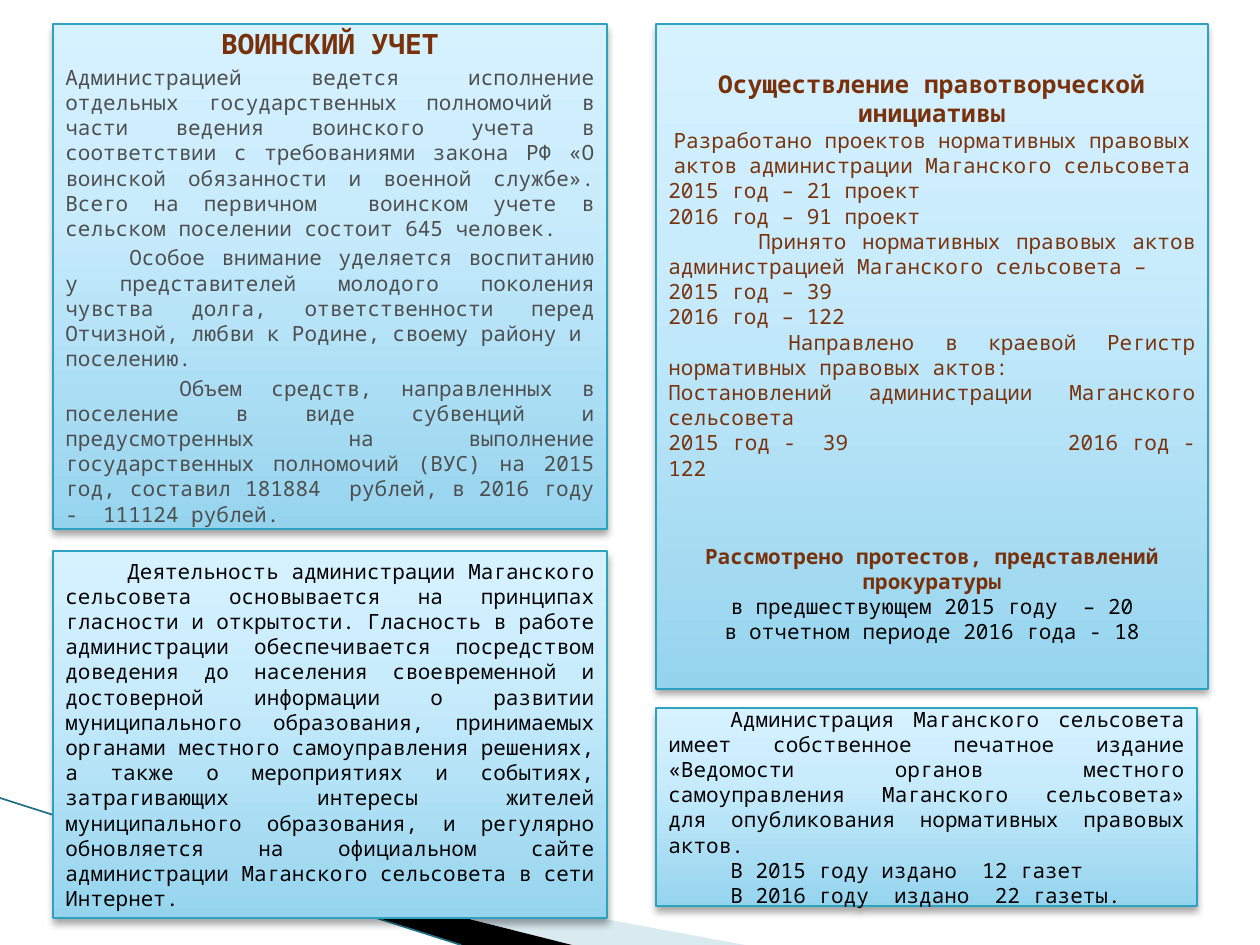
import pptx
import pptx.util
import pptx.dml.color
import pptx.enum.shapes
import pptx.enum.text
import pptx.oxml
import pptx.oxml.ns

COLORS = {
    "panel_dark": "96D4EE", "panel_mid": "C9ECFC", "panel_light": "D7F2FF",
    "border": "2DA2BF", "brown": "78310B", "gray": "4D4D4D", "black": "000000",
    "pale_wedge": "A0CBDC", "wave_line": "1F6F86",
}
FONT = "Noto Sans Mono"
SCALE = 914400 / 126
NAMESPACE = pptx.oxml.ns.nsdecls("a")
ALIGN = pptx.enum.text.PP_ALIGN
CENTER, JUSTIFY = ALIGN.CENTER, ALIGN.JUSTIFY


def px(value):
    return pptx.util.Emu(round(value * SCALE))


def rgb(name):
    return pptx.dml.color.RGBColor.from_string(COLORS[name])


def line(text, color="black", size=12, bold=False, align=JUSTIFY, indent=0, before=0, tab=None):
    """Describe one paragraph; indent and tab are px, before is points."""
    return dict(text=text, color=color, size=size, bold=bold, align=align,
                indent=indent, before=before, tab=tab)


class SlideBuilder:
    def __init__(self, slide):
        self.slide = slide

    def wedge(self, points, color, opacity=100):
        builder = self.slide.shapes.build_freeform(*points[0], scale=SCALE)
        builder.add_line_segments(points[1:], close=True)
        shape = builder.convert_to_shape()
        shape.shadow.inherit = False
        shape.fill.solid()
        shape.fill.fore_color.rgb = rgb(color)
        shape.line.fill.background()
        if opacity < 100:
            color_element = shape._element.spPr.find(".//" + pptx.oxml.ns.qn("a:srgbClr"))
            color_element.append(pptx.oxml.parse_xml(
                f'<a:alpha {NAMESPACE} val="{opacity * 1000}"/>'))

    def connector(self, start, end, color, width):
        connector = self.slide.shapes.add_connector(
            pptx.enum.shapes.MSO_CONNECTOR.STRAIGHT, *map(px, start + end))
        connector.line.color.rgb = rgb(color)
        connector.line.width = pptx.util.Pt(width)
        connector._element.spPr.append(pptx.oxml.parse_xml(f"<a:effectLst {NAMESPACE}/>"))

    def panel(self, left, top, width, height, lines):
        shape = self.slide.shapes.add_shape(
            pptx.enum.shapes.MSO_SHAPE.RECTANGLE, *map(px, (left, top, width, height)))
        shape.shadow.inherit = False
        shape.line.color.rgb = rgb("border")
        shape.line.width = pptx.util.Pt(0.75)
        self.gradient(shape)
        self.drop_shadow(shape)
        frame = shape.text_frame
        frame.word_wrap = True
        frame.vertical_anchor = pptx.enum.text.MSO_ANCHOR.MIDDLE
        for index, item in enumerate(lines):
            paragraph = frame.add_paragraph() if index else frame.paragraphs[0]
            self.fill_paragraph(paragraph, item)

    def gradient(self, shape):
        stops = ((0, "panel_dark"), (65, "panel_mid"), (100, "panel_light"))
        stop_xml = "".join(
            f'<a:gs pos="{position * 1000}"><a:srgbClr val="{COLORS[name]}"/></a:gs>'
            for position, name in stops)
        shape._element.spPr.find(pptx.oxml.ns.qn("a:prstGeom")).addnext(pptx.oxml.parse_xml(
            f'<a:gradFill {NAMESPACE} rotWithShape="1"><a:gsLst>{stop_xml}</a:gsLst>'
            '<a:lin ang="16200000" scaled="0"/></a:gradFill>'))

    def drop_shadow(self, shape):
        effects = shape._element.spPr.find(pptx.oxml.ns.qn("a:effectLst"))
        effects.append(pptx.oxml.parse_xml(
            f'<a:outerShdw {NAMESPACE} blurRad="50800" dist="38100" dir="5400000" '
            f'rotWithShape="0"><a:srgbClr val="{COLORS["black"]}"><a:alpha val="35000"/>'
            '</a:srgbClr></a:outerShdw>'))

    def fill_paragraph(self, paragraph, item):
        properties = paragraph._element.get_or_add_pPr()
        if item["indent"]:
            properties.set("marL", "0")
            properties.set("indent", str(px(item["indent"])))
        if item["tab"]:
            properties.append(pptx.oxml.parse_xml(
                f'<a:tabLst {NAMESPACE}><a:tab pos="{px(item["tab"])}" algn="l"/></a:tabLst>'))
        paragraph.alignment = item["align"]
        if item["before"]:
            paragraph.space_before = pptx.util.Pt(item["before"])
        run = paragraph.add_run()
        run.text = item["text"]
        run.font.name = FONT
        run.font.size = pptx.util.Pt(item["size"])
        run.font.bold = item["bold"]
        run.font.color.rgb = rgb(item["color"])


LAWMAKING = [
    line("Осуществление правотворческой инициативы", "brown", 14, True, CENTER),
    line("Разработано проектов нормативных правовых актов администрации Маганского сельсовета",
         "brown", align=CENTER),
    line("2015 год – 21 проект", "brown"),
    line("2016 год – 91 проект", "brown"),
    line("Принято нормативных правовых актов администрацией Маганского сельсовета –",
         "brown", indent=90),
    line("2015 год – 39", "brown"),
    line("2016 год – 122", "brown"),
    line("Направлено в краевой Регистр нормативных правовых актов:", "brown", indent=120),
    line("Постановлений администрации Маганского сельсовета", "brown"),
    line("2015 год -  39\t2016 год - 122", "brown", tab=396),
    line("Рассмотрено протестов, представлений прокуратуры", "brown", bold=True,
         align=CENTER, before=36),
    line("в предшествующем 2015 году  – 20", align=CENTER),
    line("в отчетном периоде 2016 года - 18", align=CENTER),
]
MILITARY = [
    line("ВОИНСКИЙ УЧЕТ", "brown", 16, True, CENTER),
    line("Администрацией ведется исполнение отдельных государственных полномочий в части "
         "ведения воинского учета в соответствии с требованиями закона РФ «О воинской "
         "обязанности и военной службе». Всего на первичном  воинском учете в сельском "
         "поселении состоит 645 человек.", "gray", before=2.4),
    line("Особое внимание уделяется воспитанию у представителей молодого поколения чувства "
         "долга, ответственности перед Отчизной, любви к Родине, своему району и  поселению.",
         "gray", indent=64, before=2.4),
    line("Объем средств, направленных в поселение в виде субвенций и предусмотренных на "
         "выполнение государственных полномочий (ВУС) на 2015 год, составил 181884  рублей, "
         "в 2016 году -  111124 рублей.", "gray", indent=114, before=2.4),
]
OPENNESS = [
    line("Деятельность администрации Маганского сельсовета основывается на принципах "
         "гласности и открытости. Гласность в работе администрации обеспечивается "
         "посредством доведения до населения своевременной и достоверной информации о "
         "развитии муниципального образования, принимаемых органами местного самоуправления "
         "решениях, а также о мероприятиях и событиях, затрагивающих интересы жителей "
         "муниципального образования, и регулярно обновляется на официальном сайте "
         "администрации Маганского сельсовета в сети Интернет.", indent=62),
]
NEWSPAPER = [line(text, indent=62) for text in (
    "Администрация Маганского сельсовета имеет собственное печатное издание «Ведомости "
    "органов местного самоуправления Маганского сельсовета» для опубликования нормативных "
    "правовых актов.",
    "В 2015 году издано  12 газет",
    "В 2016 году  издано  22 газеты.",
)]


def main():
    presentation = pptx.Presentation()
    presentation.slide_width, presentation.slide_height = px(1260), px(945)
    builder = SlideBuilder(presentation.slides.add_slide(presentation.slide_layouts[6]))
    builder.wedge([(69, 820), (745, 945), (573, 945), (69, 819)], "pale_wedge", 40)
    builder.wedge([(67, 818), (572, 945), (462, 945), (68, 819)], "black")
    builder.connector((0, 798), (461, 945), "wave_line", 0.95)
    builder.panel(656, 24, 552, 665, LAWMAKING)
    builder.panel(53, 24, 554, 505, MILITARY)
    builder.panel(53, 551, 554, 367, OPENNESS)
    builder.panel(656, 708, 541, 198, NEWSPAPER)
    presentation.save("out.pptx")


if __name__ == "__main__":
    main()
